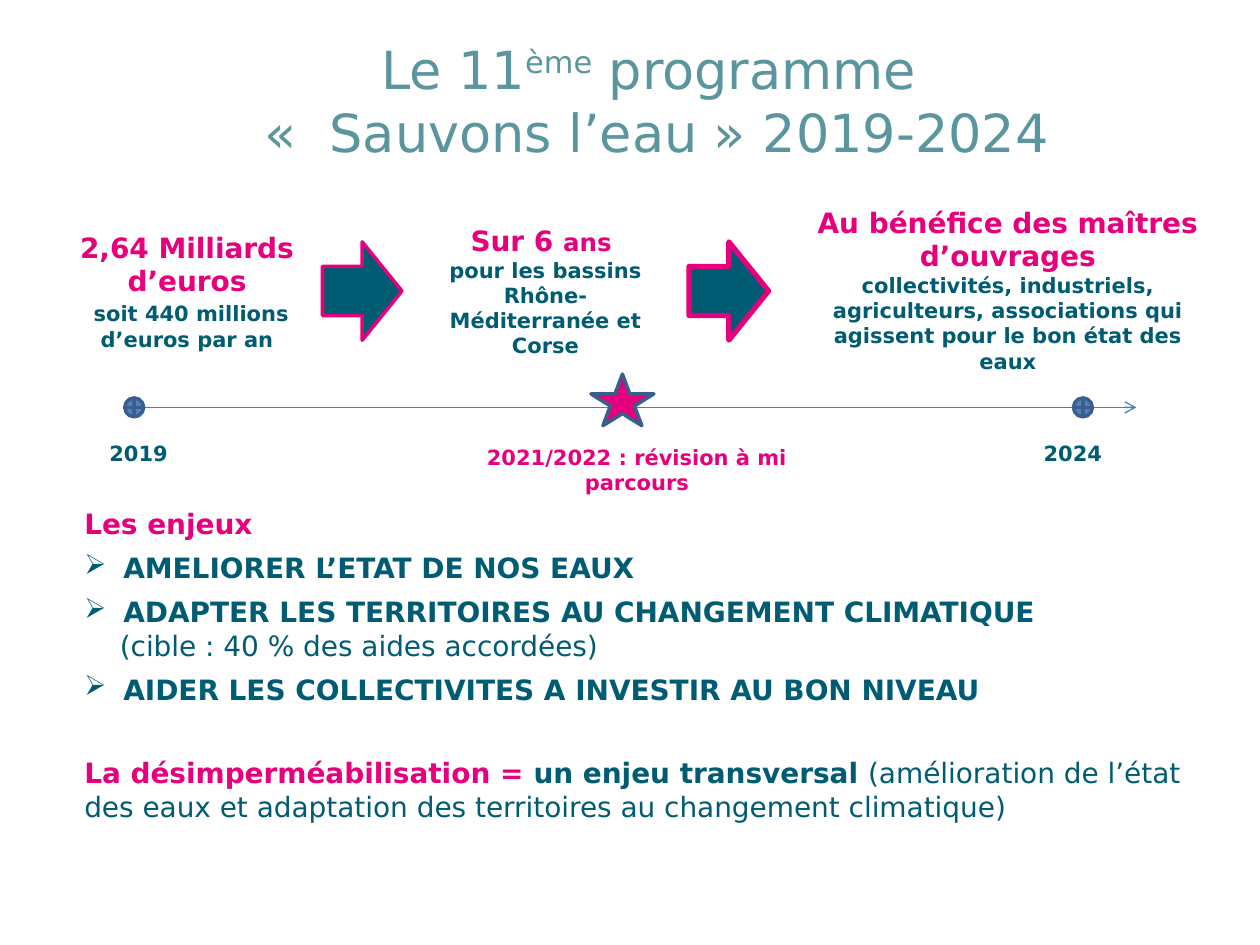
from lxml import etree
from pptx import Presentation
from pptx.dml.color import RGBColor
from pptx.enum.shapes import MSO_CONNECTOR, MSO_SHAPE
from pptx.enum.text import MSO_ANCHOR, PP_ALIGN
from pptx.oxml.ns import qn
from pptx.util import Pt

LEFT, CENTER = PP_ALIGN.LEFT, PP_ALIGN.CENTER
TOP, MIDDLE = MSO_ANCHOR.TOP, MSO_ANCHOR.MIDDLE
ARROW, STAR, DOT = (MSO_SHAPE.RIGHT_ARROW, MSO_SHAPE.STAR_5_POINT,
                    MSO_SHAPE.FLOWCHART_OR)
FONT = "DejaVu Sans"
PINK = RGBColor(0xE6, 0x00, 0x7D)
TEAL = RGBColor(0x00, 0x5C, 0x72)
GREY_TEAL = RGBColor(0x5B, 0x96, 0x9E)
AXIS_BLUE = RGBColor(0x4B, 0x7E, 0xBC)
DOT_BLUE = RGBColor(0x4F, 0x81, 0xBD)
OUTLINE_BLUE = RGBColor(0x3A, 0x5F, 0x8C)

# Runs are (text, size, colour, bold); a paragraph is a list of runs
TITLE = [
    [("Le 11", 30, GREY_TEAL, False), ("ème", 30, GREY_TEAL, False),
     (" programme ", 30, GREY_TEAL, False)],
    [("«  Sauvons l’eau » 2019-2024", 30, GREY_TEAL, False)],
]

# Key facts: (left, top, width, height), anchor, paragraphs
KEY_FACTS = [
    ((14.4, 127.4, 185, 77.8), MIDDLE, [
        [("2,64 Milliards d’euros", 16, PINK, True)],
        [(" ", 14, PINK, True),
         ("soit 440 millions d’euros par an", 12, TEAL, True)]]),
    ((235.4, 131, 152.6, 70.6), MIDDLE, [
        [("Sur 6 ", 16, PINK, True), ("ans ", 14, PINK, True)],
        [("pour les bassins Rhône-Méditerranée et Corse", 12, TEAL, True)]]),
    ((451.4, 113.8, 249.1, 90), TOP, [
        [("Au bénéfice des maîtres d’ouvrages", 16, PINK, True)],
        [("collectivités, industriels, agriculteurs, associations qui "
          "agissent pour le bon état des eaux", 12, TEAL, True)]]),
]
FACT_ARROWS = [(184.3, 2), (393.8, 3)]  # left, line width

# Timeline
AXIS_Y, AXIS_START, AXIS_END = 232.8, 79.2, 649.4
DOT_SIZE, DOT_CENTERS = 10.8, (76.7, 618.8)
STAR_BOX = (337.7, 213.8, 36, 29.5)
MILESTONES = [  # text, colour, box, alignment
    ("2019", TEAL, (55.4, 248.4, 90, 21.6), LEFT),
    ("2024", TEAL, (571, 248.4, 84.2, 21.6), CENTER),
    ("2021/2022 : révision à mi parcours", PINK,
     (245.5, 250.6, 236.9, 36), CENTER),
]

# Stakes: runs, space before, bulleted, left margin
BULLET_INDENT = 22.3
STAKES = [
    ([("Les enjeux", 16, PINK, True)], 0, False, 0),
    ([("AMELIORER L’ETAT DE NOS EAUX", 16, TEAL, True)],
     6, True, BULLET_INDENT),
    ([("ADAPTER LES TERRITOIRES AU CHANGEMENT CLIMATIQUE", 16, TEAL, True)],
     6, True, BULLET_INDENT),
    ([("(cible : 40 % des aides accordées)", 16, TEAL, False)], 0, False, 20.3),
    ([("AIDER LES COLLECTIVITES A INVESTIR AU BON NIVEAU", 16, TEAL, True)],
     6, True, BULLET_INDENT),
    ([("La désimperméabilisation = ", 16, PINK, True),
      ("un enjeu transversal ", 16, TEAL, True),
      ("(amélioration de l’état des eaux et adaptation des territoires "
       "au changement climatique)", 16, TEAL, False)], 28.5, False, 0),
]


def points(box):
    return [Pt(value) for value in box]


def add_text(slide, box, paragraphs, align=CENTER, anchor=TOP, inset=True):
    frame = slide.shapes.add_textbox(*points(box)).text_frame
    frame.word_wrap = True
    frame.vertical_anchor = anchor
    if not inset:
        frame.margin_left = frame.margin_right = Pt(0)
        frame.margin_top = frame.margin_bottom = Pt(0)
    for index, runs in enumerate(paragraphs):
        paragraph = frame.add_paragraph() if index else frame.paragraphs[0]
        paragraph.alignment = align
        for text, size, color, bold in runs:
            run = paragraph.add_run()
            run.text = text
            run.font.name = FONT
            run.font.size = Pt(size)
            run.font.bold = bold
            run.font.color.rgb = color
    return frame


def add_mark(slide, preset, box, fill, line, width):
    mark = slide.shapes.add_shape(preset, *points(box))
    mark.shadow.inherit = False
    mark.fill.solid()
    mark.fill.fore_color.rgb = fill
    mark.line.color.rgb = line
    mark.line.width = Pt(width)


def add_axis(slide):
    axis = slide.shapes.add_connector(
        MSO_CONNECTOR.STRAIGHT,
        *points((AXIS_START, AXIS_Y, AXIS_END, AXIS_Y)))
    axis.line.color.rgb = AXIS_BLUE
    axis.line.width = Pt(0.75)
    etree.SubElement(axis.line._get_or_add_ln(), qn("a:tailEnd"), type="arrow")
    etree.SubElement(axis._element.spPr, qn("a:effectLst"))


def format_stake(paragraph, space_before, bulleted, margin):
    properties = paragraph._p.get_or_add_pPr()
    properties.set("marL", str(Pt(margin)))
    if bulleted:
        properties.set("indent", str(-Pt(margin)))
        etree.SubElement(properties, qn("a:buChar"), char="➢")
    paragraph.space_before = Pt(space_before)


def main():
    deck = Presentation()
    deck.slide_width, deck.slide_height = Pt(720), Pt(540)
    slide = deck.slides.add_slide(deck.slide_layouts[6])

    # Title, with its raised ordinal
    title = add_text(slide, (99.4, 21, 552.2, 81.4), TITLE, inset=False)
    ordinal = title.paragraphs[0].runs[1]
    ordinal.font._element.set("baseline", "30000")

    # Key facts and the arrows between them
    for box, anchor, paragraphs in KEY_FACTS:
        add_text(slide, box, paragraphs, anchor=anchor)
    for left, width in FACT_ARROWS:
        add_mark(slide, ARROW, (left, 138.2, 45.4, 56.2), TEAL, PINK, width)

    # Timeline
    add_axis(slide)
    add_mark(slide, STAR, STAR_BOX, PINK, OUTLINE_BLUE, 2)
    for center in DOT_CENTERS:
        box = (center - DOT_SIZE / 2, AXIS_Y - DOT_SIZE / 2, DOT_SIZE, DOT_SIZE)
        add_mark(slide, DOT, box, DOT_BLUE, OUTLINE_BLUE, 2)
    for text, color, box, align in MILESTONES:
        add_text(slide, box, [[(text, 12, color, True)]], align)

    # Stakes
    stakes = add_text(slide, (48.2, 289.5, 635.8, 185),
                      [runs for runs, *_ in STAKES], LEFT, inset=False)
    for paragraph, (_, *layout) in zip(stakes.paragraphs, STAKES):
        format_stake(paragraph, *layout)

    deck.save("out.pptx")


if __name__ == "__main__":
    main()
